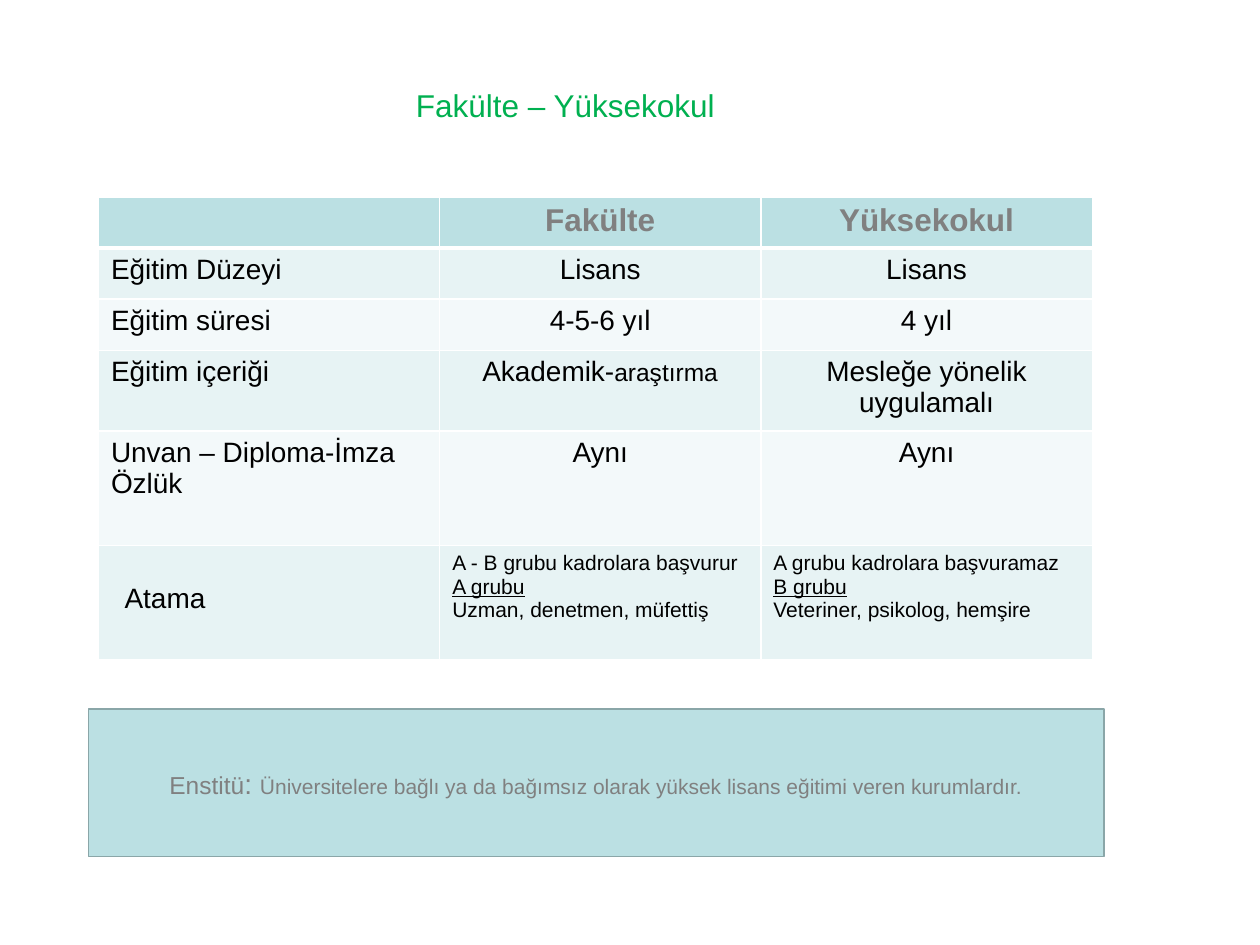
import pptx
import pptx.dml.color
import pptx.enum.shapes
import pptx.enum.text
import pptx.oxml
import pptx.oxml.ns
import pptx.util

Pt = pptx.util.Pt
ALIGN = pptx.enum.text.PP_ALIGN
ANCHOR = pptx.enum.text.MSO_ANCHOR

COLORS = {
    "title": "00B050",
    "accent": "BBE0E3",
    "outline": "8AA6A8",
    "muted": "808080",
    "text": "000000",
    "border": "FFFFFF",
    "band_dark": "E7F3F4",
    "band_light": "F3F9FA",
}
COLUMN_WIDTHS = [195, 183.5, 189.5]
ROW_HEIGHTS = [29.25, 29.25, 29.25, 46, 65.5, 65.5]
HEADERS = ["", "Fakülte", "Yüksekokul"]
ROWS = [
    ["Eğitim Düzeyi", "Lisans", "Lisans"],
    ["Eğitim süresi", "4-5-6 yıl", "4 yıl"],
    ["Eğitim içeriği", [[("Akademik-", {}), ("araştırma", {"size": 14})]],
     "Mesleğe yönelik uygulamalı"],
    ["Unvan – Diploma-İmza\nÖzlük", "Aynı", "Aynı"],
]
APPOINTMENT = "Atama"
APPOINTMENT_DETAILS = [
    ["A - B grubu kadrolara başvurur", "A grubu", "Uzman, denetmen, müfettiş"],
    ["A grubu kadrolara başvuramaz", "B grubu", "Veteriner, psikolog, hemşire"],
]


def rgb(name):
    return pptx.dml.color.RGBColor.from_string(COLORS[name])


def write_text(text_frame, text, *, size, color="text", bold=False, align=ALIGN.LEFT):
    if isinstance(text, str):
        text = [[(line, {})] for line in text.split("\n")]
    for index, runs in enumerate(text):
        paragraph = text_frame.add_paragraph() if index else text_frame.paragraphs[0]
        paragraph.alignment = align
        paragraph.space_before = Pt(0)
        paragraph.line_spacing = 1.0
        for content, changes in runs:
            run = paragraph.add_run()
            run.text = content
            run.font.name = "Arial"
            run.font.size = Pt(changes.get("size", size))
            run.font.bold = bold
            run.font.underline = changes.get("underline", False)
            run.font.color.rgb = rgb(color)


def style_cell(cell, fill, bottom_width=1):
    cell.fill.solid()
    cell.fill.fore_color.rgb = rgb(fill)
    properties = cell._tc.get_or_add_tcPr()
    widths = {"lnL": 1, "lnR": 1, "lnT": 1, "lnB": bottom_width}
    for position, (side, width) in enumerate(widths.items()):
        border = pptx.oxml.parse_xml(
            f'<a:{side} {pptx.oxml.ns.nsdecls("a")} w="{Pt(width)}"><a:solidFill>'
            f'<a:srgbClr val="{COLORS["border"]}"/></a:solidFill></a:{side}>'
        )
        properties.insert(position, border)


def add_title(slide, left, top, width, height):
    title = slide.shapes.title
    title.left, title.top, title.width, title.height = map(Pt, (left, top, width, height))
    title.text_frame.word_wrap = True
    title.text_frame.vertical_anchor = ANCHOR.TOP
    write_text(title.text_frame, "Fakülte – Yüksekokul", size=18, color="title")


def add_comparison(slide, left, top):
    table = slide.shapes.add_table(
        len(ROW_HEIGHTS), len(COLUMN_WIDTHS), Pt(left), Pt(top),
        Pt(sum(COLUMN_WIDTHS)), Pt(sum(ROW_HEIGHTS)),
    ).table
    for column, width in zip(table.columns, COLUMN_WIDTHS):
        column.width = Pt(width)
    for row, height in zip(table.rows, ROW_HEIGHTS):
        row.height = Pt(height)

    for column, text in enumerate(HEADERS):
        cell = table.cell(0, column)
        style_cell(cell, "accent", bottom_width=3)
        if text:
            write_text(cell.text_frame, text, size=18, color="muted", bold=True,
                       align=ALIGN.CENTER)

    for row, texts in enumerate(ROWS, start=1):
        for column, text in enumerate(texts):
            cell = table.cell(row, column)
            style_cell(cell, "band_dark" if row % 2 else "band_light")
            write_text(cell.text_frame, text, size=16,
                       align=ALIGN.CENTER if column else ALIGN.LEFT)

    last_row = len(ROW_HEIGHTS) - 1
    label = table.cell(last_row, 0)
    style_cell(label, "band_dark")
    label.margin_left, label.margin_top = Pt(15), Pt(21.5)
    write_text(label.text_frame, APPOINTMENT, size=16)
    for column, (summary, group, examples) in enumerate(APPOINTMENT_DETAILS, start=1):
        cell = table.cell(last_row, column)
        style_cell(cell, "band_dark")
        lines = [[(summary, {})], [(group, {"underline": True})], [(examples, {})]]
        write_text(cell.text_frame, lines, size=12)


def add_institute_note(slide, left, top, width, height):
    note = slide.shapes.add_shape(
        pptx.enum.shapes.MSO_SHAPE.RECTANGLE, Pt(left), Pt(top), Pt(width), Pt(height)
    )
    note.shadow.inherit = False
    note.fill.solid()
    note.fill.fore_color.rgb = rgb("accent")
    note.line.color.rgb = rgb("outline")
    note.line.width = Pt(1)
    note.text_frame.word_wrap = True
    note.text_frame.vertical_anchor = ANCHOR.MIDDLE
    runs = [
        ("Enstitü", {"size": 14}),
        (": ", {"size": 16}),
        ("Üniversitelere bağlı ya da bağımsız olarak yüksek lisans eğitimi veren kurumlardır.", {}),
    ]
    write_text(note.text_frame, [runs], size=12, color="muted", align=ALIGN.CENTER)


def main():
    presentation = pptx.Presentation()
    presentation.slide_width, presentation.slide_height = Pt(720), Pt(540)
    slide = presentation.slides.add_slide(presentation.slide_layouts[5])
    add_title(slide, 230.5, 45.5, 237.5, 29)
    add_comparison(slide, 56.25, 112.5)
    add_institute_note(slide, 50.5, 405.25, 580.5, 84.25)
    presentation.save("out.pptx")


if __name__ == "__main__":
    main()
